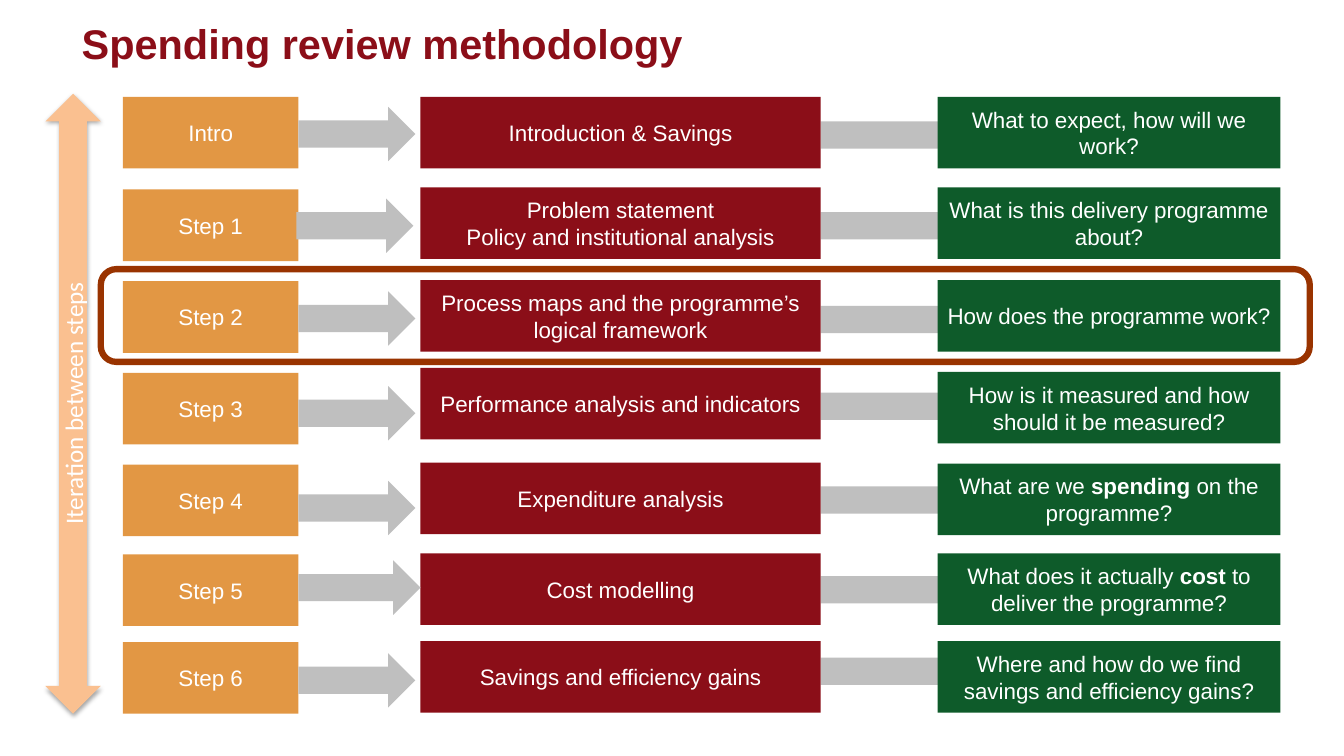
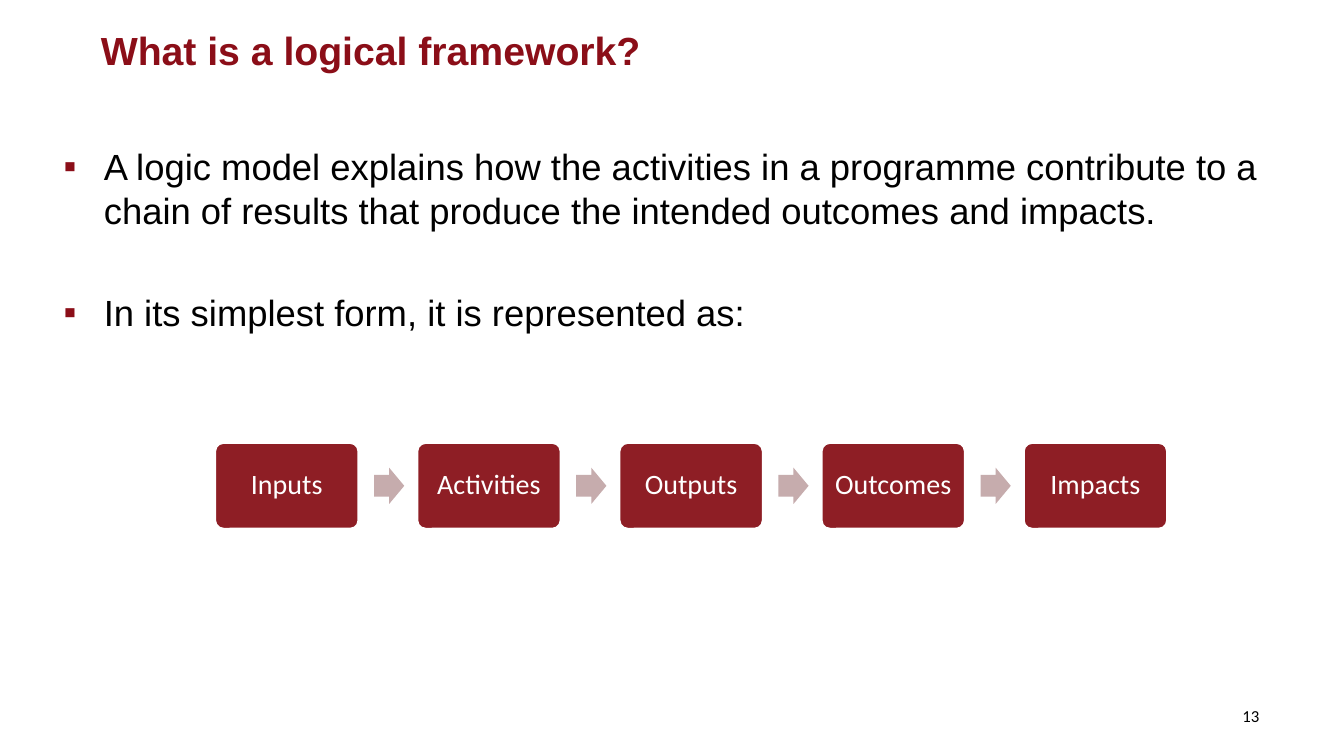
"""Build two slides on spending reviews: the methodology steps and the logical framework."""
from dataclasses import dataclass
from typing import Any

from lxml import etree
from pptx import Presentation
from pptx import util as u
from pptx.dml import color
from pptx.enum import shapes, text
from pptx.oxml import ns


@dataclass(frozen=True)
class Theme:
    red: str = "8B0E18"
    amber: str = "E29744"
    green: str = "0E5B2A"
    grey: str = "BFBFBF"
    peach: str = "FAC090"
    frame: str = "993300"
    chain: str = "8E1E25"
    chain_arrow: str = "C6ACAD"
    white: str = "FFFFFF"
    black: str = "000000"
    main_font: str = "Arial"
    second_font: str = "Calibri"
    number_size: float = 12
    step_size: float = 16
    iteration_size: float = 18
    chain_size: float = 20
    body_size: float = 26
    title_size: float = 28
    large_title_size: float = 29.6


@dataclass(frozen=True)
class Step:
    label: str
    topic: str
    question: str
    label_top: float
    topic_top: float
    question_top: float
    arrow_top: float
    link_top: float
    arrow_left: float = 2.96
    arrow_width: float = 1.16


THEME = Theme()
SHAPE = shapes.MSO_SHAPE
ALIGN = text.PP_ALIGN
STEP_HEIGHT, ARROW_HEIGHT = 0.71, 0.54

STEPS = [
    Step("Intro", "Introduction & Savings", "What to expect, how will we work?",
         0.96, 0.96, 0.96, 1.06, 1.07),
    Step("Step 1", "Problem statement\nPolicy and institutional analysis",
         "What is this delivery programme about?",
         1.88, 1.86, 1.86, 1.97, 1.97, arrow_left=2.94),
    Step("Step 2", "Process maps and the programme’s logical framework",
         "How does the programme work?", 2.79, 2.78, 2.78, 2.89, 2.9),
    Step("Step 3", "Performance analysis and indicators",
         "How is it measured and how should it be measured?", 3.7, 3.65, 3.69, 3.83, 3.76),
    Step("Step 4", "Expenditure analysis", "What are we **spending** on the programme?",
         4.61, 4.59, 4.6, 4.77, 4.69),
    Step("Step 5", "Cost modelling", "What does it actually **cost** to deliver the programme?",
         5.5, 5.49, 5.49, 5.56, 5.58, arrow_width=1.21),
    Step("Step 6", "Savings and efficiency gains",
         "Where and how do we find savings and efficiency gains?", 6.37, 6.36, 6.36, 6.48, 6.39),
]
CHAIN = ["Inputs", "Activities", "Outputs", "Outcomes", "Impacts"]
BULLETS = [
    "A logic model explains how the activities in a programme contribute to a chain of "
    "results that produce the intended outcomes and impacts.",
    "In its simplest form, it is represented as:",
]


def place(shape: Any, left: float, top: float, width: float, height: float) -> None:
    """Move and size a shape, in inches."""
    shape.left, shape.top = u.Inches(left), u.Inches(top)
    shape.width, shape.height = u.Inches(width), u.Inches(height)


def add_bullet(paragraph: Any) -> None:
    """Give a paragraph a hanging square bullet."""
    properties = paragraph._p.get_or_add_pPr()
    properties.set("marL", str(u.Inches(0.4)))
    properties.set("indent", str(u.Inches(-0.4)))
    bullet_color = etree.SubElement(properties, ns.qn("a:buClr"))
    etree.SubElement(bullet_color, ns.qn("a:srgbClr"), val=THEME.red)
    etree.SubElement(properties, ns.qn("a:buFont"), typeface=THEME.main_font)
    etree.SubElement(properties, ns.qn("a:buChar"), char="▪")


def write(shape: Any, content: str, *, size: float = THEME.step_size,
          font: str = THEME.main_font, ink: str = THEME.white, bold: bool = False,
          align: Any = ALIGN.CENTER, anchor: Any = text.MSO_ANCHOR.MIDDLE,
          bullets: bool = False, gap: float = 0, line_spacing: float | None = None) -> None:
    """Write one paragraph per line, with **marked** words in bold."""
    frame = shape.text_frame
    frame.word_wrap = True
    frame.auto_size = text.MSO_AUTO_SIZE.NONE
    frame.vertical_anchor = anchor
    for index, line in enumerate(content.split("\n")):
        paragraph = frame.add_paragraph() if index else frame.paragraphs[0]
        if bullets:
            add_bullet(paragraph)
        paragraph.alignment = align
        paragraph.space_before = u.Pt(gap if index else 0)
        if line_spacing:
            paragraph.line_spacing = line_spacing
        for position, words in enumerate(line.split("**")):
            run = paragraph.add_run()
            run.text = words
            run.font.name, run.font.size = font, u.Pt(size)
            run.font.bold = bold or position % 2 == 1
            run.font.color.rgb = color.RGBColor.from_string(ink)


def add_shape(slide: Any, kind: Any, left: float, top: float, width: float, height: float, *,
              fill: str | None = None, line: str | None = None, line_width: float = 0) -> Any:
    """Add a flat preset shape with an optional fill and outline."""
    shape = slide.shapes.add_shape(kind, *map(u.Inches, (left, top, width, height)))
    shape.shadow.inherit = False
    if fill:
        shape.fill.solid()
        shape.fill.fore_color.rgb = color.RGBColor.from_string(fill)
    else:
        shape.fill.background()
    if line:
        shape.line.color.rgb = color.RGBColor.from_string(line)
        shape.line.width = u.Pt(line_width)
    else:
        shape.line.fill.background()
    return shape


def add_shadow(shape: Any) -> None:
    """Give a shape a soft shadow below it."""
    effects = shape._element.spPr.find(ns.qn("a:effectLst"))
    shadow = etree.SubElement(effects, ns.qn("a:outerShdw"), blurRad=str(u.Pt(3.1)),
                              dist=str(u.Pt(1.8)), dir="5400000", rotWithShape="0")
    ink = etree.SubElement(shadow, ns.qn("a:srgbClr"), val=THEME.black)
    etree.SubElement(ink, ns.qn("a:alpha"), val="35000")


def add_slide(presentation: Any, layout: int, title: str, left: float, top: float,
              size: float) -> Any:
    """Add a slide with the shared title style."""
    slide = presentation.slides.add_slide(presentation.slide_layouts[layout])
    place(slide.shapes.title, left, top, 11.51, 0.45)
    write(slide.shapes.title, title, size=size, ink=THEME.red, bold=True, align=ALIGN.LEFT)
    return slide


def draw_step(slide: Any, step: Step) -> None:
    """Draw one row: label, arrow, topic, link and question."""
    add_shape(slide, SHAPE.RIGHT_ARROW, 8.14, step.link_top, 1.56, ARROW_HEIGHT, fill=THEME.grey)
    boxes = [
        (step.label, 1.22, step.label_top, 1.74, THEME.amber),
        (step.topic, 4.17, step.topic_top, 3.97, THEME.red),
        (step.question, 9.3, step.question_top, 3.4, THEME.green),
    ]
    for content, left, top, width, fill in boxes:
        box = add_shape(slide, SHAPE.RECTANGLE, left, top, width, STEP_HEIGHT, fill=fill)
        write(box, content)
    add_shape(slide, SHAPE.RIGHT_ARROW, step.arrow_left, step.arrow_top, step.arrow_width,
              ARROW_HEIGHT, fill=THEME.grey)


def build_methodology(presentation: Any) -> None:
    """Build the slide of review steps, with Step 2 framed."""
    slide = add_slide(presentation, 5, "Spending review methodology", 0.71, 0.2,
                      THEME.large_title_size)
    for step in STEPS:
        draw_step(slide, step)
    add_shape(slide, SHAPE.ROUNDED_RECTANGLE, 1, 2.67, 11.99, 0.92,
              line=THEME.frame, line_width=4.5)
    iteration = add_shape(slide, SHAPE.UP_DOWN_ARROW, 0.45, 0.93, 0.55, 6.15, fill=THEME.peach)
    add_shadow(iteration)
    write(iteration, "Iteration between steps", size=THEME.iteration_size, font=THEME.second_font)
    iteration.text_frame._txBody.bodyPr.set("vert", "vert270")


def build_framework(presentation: Any) -> None:
    """Build the slide that explains the logical framework."""
    slide = add_slide(presentation, 1, "What is a logical framework?", 0.9, 0.27,
                      THEME.title_size)
    body = slide.placeholders[1]
    place(body, 0.53, 1.38, 12.8, 2.14)
    write(body, "\n".join(BULLETS), size=THEME.body_size, ink=THEME.black, align=ALIGN.LEFT,
          anchor=text.MSO_ANCHOR.TOP, bullets=True, gap=42)
    for index, stage in enumerate(CHAIN):
        left = 2.13 + index * 2.005
        box = add_shape(slide, SHAPE.ROUNDED_RECTANGLE, left, 4.39, 1.43, 0.86,
                        fill=THEME.chain, line=THEME.white, line_width=2)
        box.adjustments[0] = 0.1
        box.text_frame.margin_left = box.text_frame.margin_right = u.Inches(0.08)
        write(box, stage, size=THEME.chain_size, font=THEME.second_font, line_spacing=0.9)
        if index < len(CHAIN) - 1:
            arrow = add_shape(slide, SHAPE.RIGHT_ARROW, left + 1.58, 4.64, 0.3, 0.36,
                              fill=THEME.chain_arrow)
            arrow.adjustments[0] = 0.6
    number = slide.shapes.add_textbox(*map(u.Inches, (11.83, 6.95, 0.76, 0.39)))
    write(number, "13", size=THEME.number_size, font=THEME.second_font, ink=THEME.black,
          align=ALIGN.RIGHT, anchor=text.MSO_ANCHOR.TOP)


def main() -> None:
    """Build and save the presentation."""
    presentation = Presentation()
    presentation.slide_width, presentation.slide_height = u.Inches(13.33), u.Inches(7.5)
    build_methodology(presentation)
    build_framework(presentation)
    presentation.save("out.pptx")


if __name__ == "__main__":
    main()
